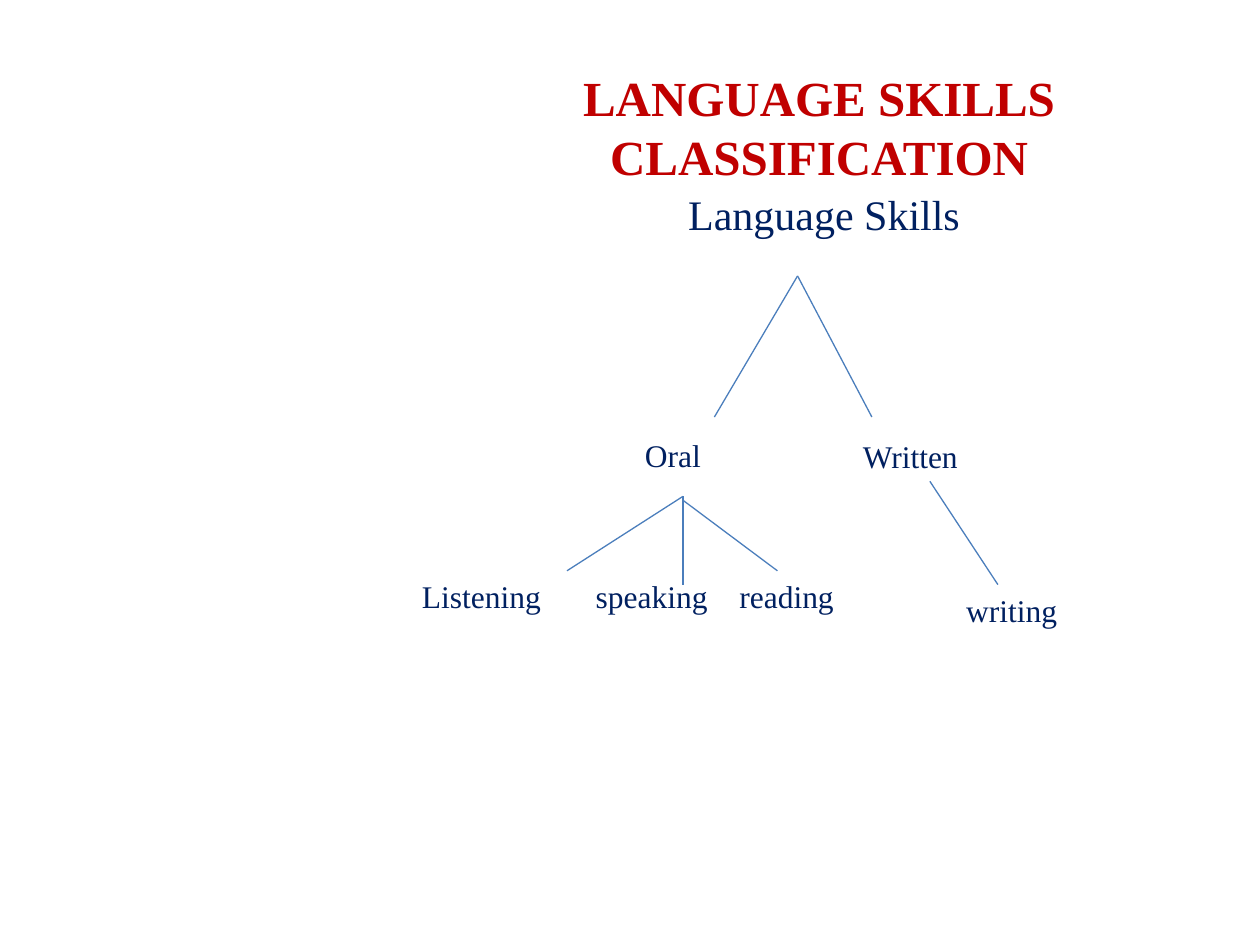
from dataclasses import dataclass

from lxml import etree
from pptx import Presentation
from pptx.dml.color import RGBColor
from pptx.enum.shapes import MSO_CONNECTOR
from pptx.enum.text import MSO_ANCHOR, PP_ALIGN
from pptx.oxml.ns import qn
from pptx.util import Inches, Pt

STRAIGHT = MSO_CONNECTOR.STRAIGHT
TOP, MIDDLE = MSO_ANCHOR.TOP, MSO_ANCHOR.MIDDLE
LEFT, CENTER = PP_ALIGN.LEFT, PP_ALIGN.CENTER


@dataclass(frozen=True)
class Theme:
    font: str = "Times New Roman"
    red: RGBColor = RGBColor(0xC0, 0x00, 0x00)
    navy: RGBColor = RGBColor(0x00, 0x20, 0x60)
    branch: RGBColor = RGBColor(0x4B, 0x7E, 0xBC)
    title_size: int = 28
    root_size: int = 24
    label_size: int = 18
    line_width: float = 0.75


def write_text(tf, text, *, font, size, color, bold=False, align=LEFT, spacing=None):
    p = tf.paragraphs[0]
    p.alignment = align
    if spacing:
        p.line_spacing = Pt(spacing)
    r = p.add_run()
    r.text = text
    r.font.name = font
    r.font.size = Pt(size)
    r.font.bold = bold
    r.font.color.rgb = color


class TreeSlide:
    def __init__(self, slide, theme):
        self.s = slide
        self.theme = theme

    def text(self, text, left, top, width, height, anchor=TOP, **fmt):
        sp = self.s.shapes.add_textbox(*map(Inches, (left, top, width, height)))
        tf = sp.text_frame
        tf.word_wrap = True
        tf.vertical_anchor = anchor
        write_text(tf, text, font=self.theme.font, **fmt)

    def label(self, text, left, top, width):
        self.text(text, left, top, width, 0.4,
                  size=self.theme.label_size, color=self.theme.navy)

    def branch(self, start, end):
        line = self.s.shapes.add_connector(STRAIGHT, *map(Inches, (*start, *end)))
        line.line.color.rgb = self.theme.branch
        line.line.width = Pt(self.theme.line_width)
        etree.SubElement(line._element.spPr, qn("a:effectLst"))


def main():
    prs = Presentation()
    prs.slide_width, prs.slide_height = Inches(10), Inches(7.5)
    theme = Theme()
    tree = TreeSlide(prs.slides.add_slide(prs.slide_layouts[6]), theme)

    # Title and root of the tree
    tree.text("LANGUAGE SKILLS CLASSIFICATION", 3, 0.48, 7, 1.05, anchor=MIDDLE,
              size=theme.title_size, color=theme.red, bold=True, align=CENTER,
              spacing=33.6)
    tree.text("Language Skills", 3.08, 1.45, 6.92, 0.5,
              size=theme.root_size, color=theme.navy, align=CENTER)

    # Branches, grouped by the point they start from
    branches = [
        ((6.33, 2.19), [(5.67, 3.31), (6.92, 3.31)]),
        ((5.42, 3.94), [(4.5, 4.53), (5.42, 4.64)]),
        ((5.42, 3.97), [(6.17, 4.53)]),
        ((7.38, 3.82), [(7.92, 4.64)]),
    ]
    for start, ends in branches:
        for end in ends:
            tree.branch(start, end)

    # Skill labels: text, left, top, width
    labels = [
        ("Oral", 5.02, 3.41, 0.98),
        ("Written", 6.75, 3.42, 1.25),
        ("Listening", 3.25, 4.53, 1.25),
        ("speaking", 4.63, 4.53, 1.14),
        ("reading", 5.77, 4.53, 1.15),
        ("writing", 7.57, 4.64, 1.25),
    ]
    for label in labels:
        tree.label(*label)

    prs.save("out.pptx")


if __name__ == "__main__":
    main()
